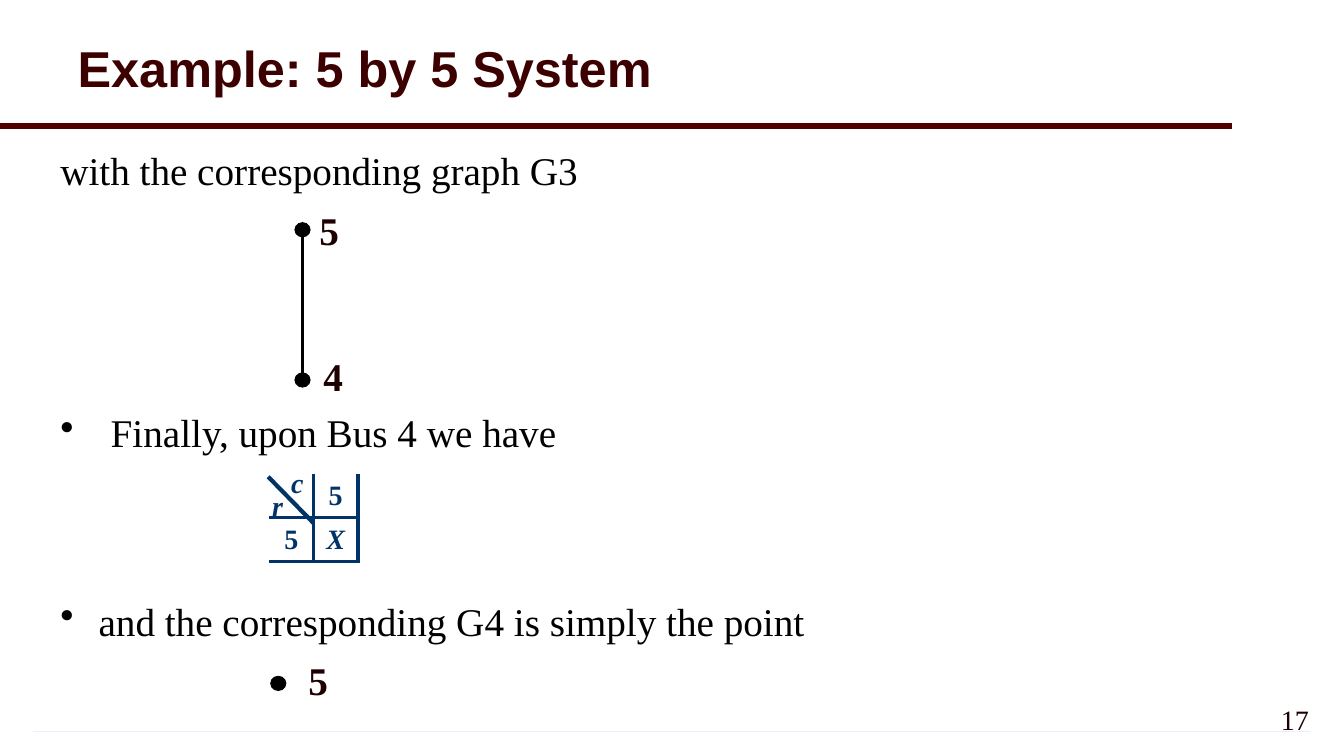
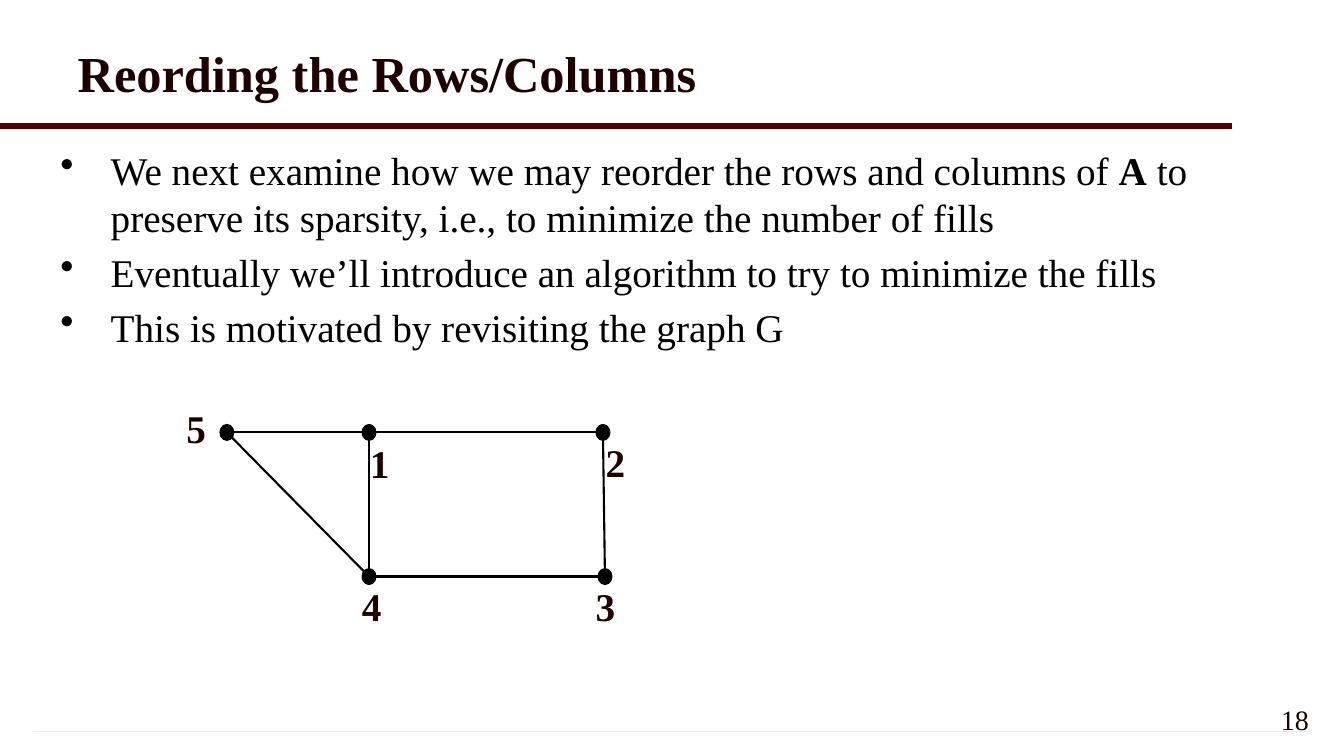
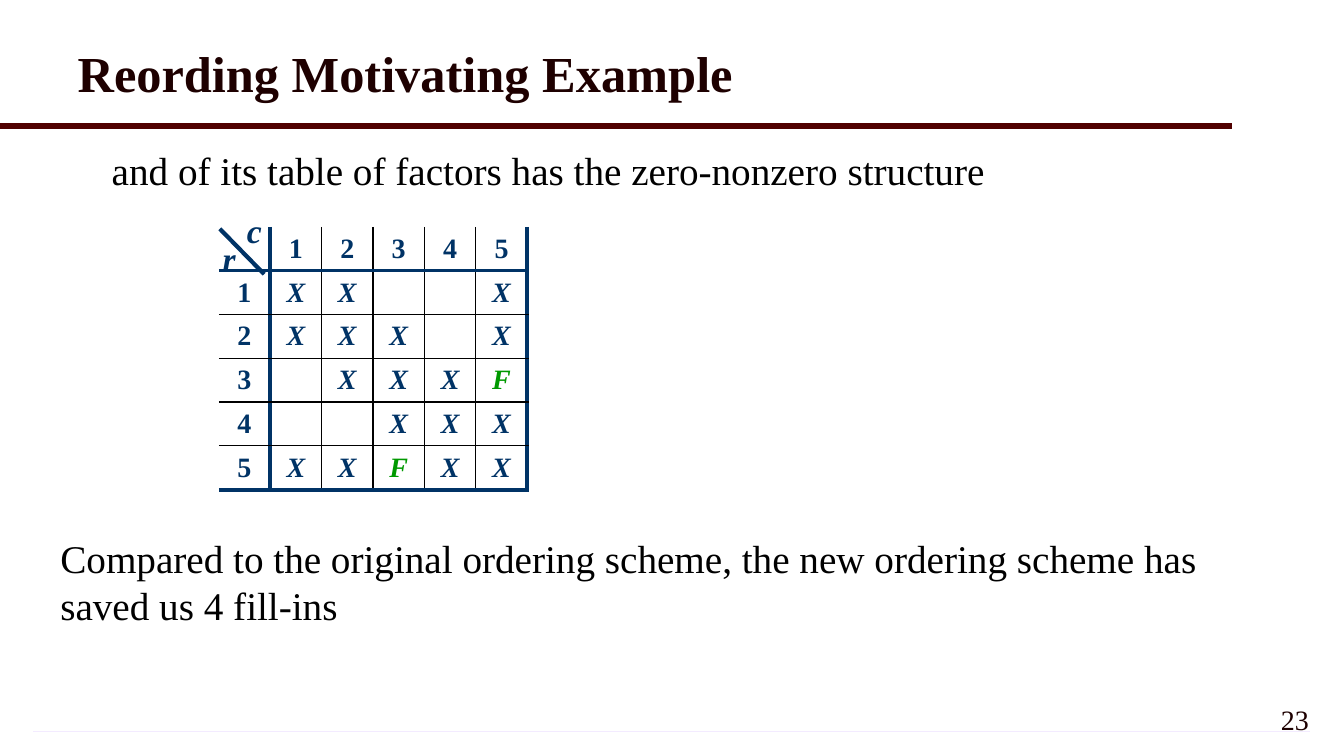
from pptx import Presentation
from pptx.dml.color import RGBColor as Rgb
from pptx.enum.shapes import MSO_CONNECTOR as Conn, MSO_SHAPE as Shape
from pptx.enum.text import MSO_ANCHOR as Anchor, MSO_AUTO_SIZE as Fit, PP_ALIGN as Align
from pptx.oxml.ns import qn
from pptx.util import Inches, Pt
from lxml.etree import SubElement

COL = {"black": "000000", "dark": "1E0000", "wine": "3C0000", "bar": "500000",
       "navy": "003366", "green": "009900", "lilac": "CC99FF", "pale": "F3EBFF"}
SERIF = "Times New Roman"
ROW = 0.435


def write(slide, box, paras, size, color, bold=False, italic=False, align=Align.LEFT, wrap=False):
    """Add a text box; paras are (text, indent, bullet, space before), *...* is bold."""
    frame = slide.shapes.add_textbox(*map(Inches, box)).text_frame
    frame.word_wrap = wrap
    for i, (text, indent, bullet, before) in enumerate(paras):
        para = frame.paragraphs[0] if i == 0 else frame.add_paragraph()
        props = para._p.get_or_add_pPr()
        props.set("marL", str(Inches(indent)))
        if bullet:
            props.set("indent", str(-Inches(indent)))
            SubElement(props, qn("a:buChar")).set("char", "•")
        para.alignment = align
        para.line_spacing = Pt(size * 1.2)
        para.space_before = Pt(before)
        for k, part in enumerate(text.split("*")):
            run = para.add_run()
            run.text = part
            font = run.font
            font.name, font.size = SERIF, Pt(size)
            font.bold, font.italic = bold or k % 2 == 1, italic
            font.color.rgb = Rgb.from_string(COL[color])


def rule(slide, start, end, color, width):
    """Draw a straight line without a shadow."""
    line = slide.shapes.add_connector(Conn.STRAIGHT, *map(Inches, (*start, *end)))
    line.line.color.rgb = Rgb.from_string(COL[color])
    line.line.width = Pt(width)
    SubElement(line._element.spPr, qn("a:effectLst"))


# nodes: label, dot centre, label corner; corner: r and c labels, slash ends
PAGES = [
    {"title": "Example: 5 by 5 System", "font": "Arial", "color": "wine", "top": 0.08, "number": "17",
     "width": 10.5,
     "body": [("with the corresponding graph G3", 0, False, 0),
              ("Finally, upon Bus 4 we have", 0.5, True, 154),
              ("and the corresponding G4 is simply the point", 0.38, True, 101)],
     "dot": (0.15, 0.14, 0.75),
     "nodes": [("5", (3, 2.28), (3.07, 2)), ("4", (3, 3.77), (3.11, 3.45)),
               ("5", (2.76, 6.78), (2.96, 6.46))],
     "edges": [(0, 1)],
     "grid": ["_5", "5X"], "at": (2.67, 4.7), "cell": 0.44,
     "corner": [(2.6, 4.8), (2.79, 4.57), (2.66, 4.73), (3.11, 5.19)], "size": 20},
    {"title": "Reording the Rows/Columns", "font": SERIF, "color": "dark", "top": 0.13, "number": "18",
     "width": 12,
     "body": [("We next examine how we may reorder the rows and columns of *A* to preserve "
               "its sparsity, i.e., to minimize the number of fills", 0.5, True, 0),
              ("Eventually we’ll introduce an algorithm to try to minimize the fills", 0.5, True, 5.6),
              ("This is motivated by revisiting the graph G", 0.5, True, 5.6)],
     "dot": (0.12, 0.14, 2),
     "nodes": [("1", (3.66, 4.29), (3.57, 4.31)), ("2", (5.98, 4.29), (5.91, 4.3)),
               ("3", (6, 5.72), (5.81, 5.73)), ("4", (3.66, 5.72), (3.49, 5.73)),
               ("5", (2.25, 4.29), (1.75, 3.96))],
     "edges": [(4, 0), (0, 1), (0, 3), (1, 2), (3, 2), (4, 3)]},
    {"title": "Reording Motivating Example", "font": SERIF, "color": "dark", "top": 0.13, "number": "23",
     "width": 11.92,
     "body": [("and of its table of factors has the zero-nonzero structure", 0.51, False, 0),
              ("Compared to the original ordering scheme, the new ordering scheme has "
               "saved us 4 fill-ins", 0, False, 243.5)],
     "nodes": [], "edges": [],
     "grid": ["_12345", "1XX__X", "2XXX_X", "3_XXXF", "4__XXX", "5XXFXX"],
     "at": (2.17, 2.25), "cell": 0.51,
     "corner": [(2.11, 2.31), (2.35, 2.03), (2.18, 2.27), (2.62, 2.72)], "size": 24},
]

deck = Presentation()
deck.slide_width, deck.slide_height = Inches(13.33), Inches(7.5)

for page in PAGES:
    slide = deck.slides.add_slide(deck.slide_layouts[5])

    foot = slide.shapes.add_shape(Shape.RECTANGLE, *map(Inches, (0.33, 7.25, 12.66, 0.01)))
    foot.shadow.inherit = False
    foot.line.fill.background()
    foot.fill.gradient()
    for stop, name in zip(foot.fill.gradient_stops, ("lilac", "pale")):
        stop.color.rgb = Rgb.from_string(COL[name])
    rule(slide, (0, 1.25), (12.22, 1.25), "bar", 4)

    title = slide.shapes.title
    title.left, title.top, title.width, title.height = map(Inches, (0.67, page["top"], 9, 1.17))
    frame = title.text_frame
    frame.text = page["title"]
    frame.vertical_anchor, frame.auto_size = Anchor.MIDDLE, Fit.NONE
    para = frame.paragraphs[0]
    para.alignment = Align.LEFT
    font = para.runs[0].font
    font.name, font.size, font.bold = page["font"], Pt(36), True
    font.color.rgb = Rgb.from_string(COL[page["color"]])

    write(slide, (0.5, 1.4, page["width"], 5), page["body"], 28, "black", wrap=True)
    write(slide, (11, 6.92, 2.08, 0.5), [(page["number"], 0, False, 0)], 20, "dark",
          align=Align.RIGHT, wrap=True)

    # Graph
    for a, b in page["edges"]:
        rule(slide, page["nodes"][a][1], page["nodes"][b][1], "black", 1.5)
    for label, (x, y), spot in page["nodes"]:
        w, h, edge = page["dot"]
        dot = slide.shapes.add_shape(Shape.OVAL, *map(Inches, (x - w / 2, y - h / 2, w, h)))
        dot.shadow.inherit = False
        dot.fill.solid()
        dot.fill.fore_color.rgb = dot.line.color.rgb = Rgb.from_string(COL["black"])
        dot.line.width = Pt(edge)
        write(slide, (*spot, 0.4, 0.43), [(label, 0, False, 0)], 28, "dark", bold=True)

    # Matrix
    if "grid" not in page:
        continue
    grid = page["grid"]
    n = len(grid)
    table = slide.shapes.add_table(n, n, *map(Inches, (*page["at"], n * page["cell"], n * ROW))).table
    table.first_row = table.horz_banding = False
    for r, marks in enumerate(grid):
        for c, mark in enumerate(marks):
            cell = table.cell(r, c)
            cell.vertical_anchor = Anchor.MIDDLE
            para = cell.text_frame.paragraphs[0]
            para.text = "" if mark == "_" else mark
            para.alignment = Align.CENTER
            font = para.font if mark == "_" else para.runs[0].font
            font.name, font.size = SERIF, Pt(20)
            font.bold, font.italic = True, mark in "XF"
            font.color.rgb = Rgb.from_string(COL["green" if mark == "F" else "navy"])
            props = cell._tc.get_or_add_tcPr()
            for side, k in zip("LRTB", (c, c + 1, r, r + 1)):
                line = SubElement(props, qn("a:ln" + side))
                if k == 0:
                    SubElement(line, qn("a:noFill"))
                    continue
                heavy = k in (1, n)
                line.set("w", str(Pt(3 if heavy else 1)))
                fill = SubElement(line, qn("a:solidFill"))
                SubElement(fill, qn("a:srgbClr")).set("val", COL["navy" if heavy else "black"])
            cell.fill.background()

    *spots, start, end = page["corner"]
    for name, spot in zip("rc", spots):
        write(slide, (*spot, 0.21, 0.44), [(name, 0, False, 0)], page["size"], "navy",
              bold=True, italic=True)
    rule(slide, start, end, "navy", 3)

deck.save("out.pptx")
